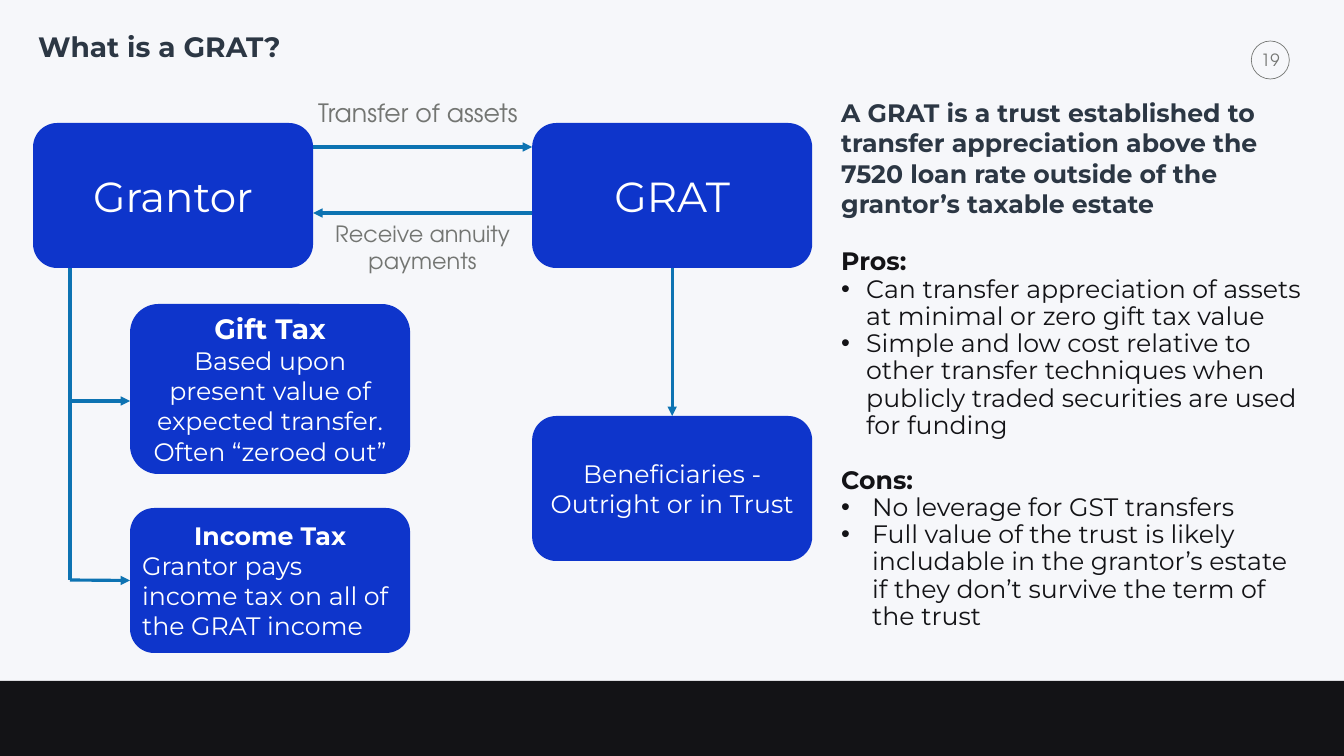
from lxml.etree import SubElement
from pptx import Presentation
from pptx.dml.color import RGBColor
from pptx.enum.shapes import MSO_CONNECTOR, MSO_SHAPE
from pptx.enum.text import MSO_ANCHOR, MSO_AUTO_SIZE, PP_ALIGN
from pptx.oxml.ns import qn
from pptx.util import Inches, Pt

SCALE = Inches(1) / 50.4  # EMU per px
SANS, GEOMETRIC = "Montserrat", "TeX Gyre Adventor"
BLUE, ARROW, WHITE = "0E35CB", "0D73B2", "FFFFFF"
INK, SLATE, GRAY, PALE = "131316", "2C3744", "737572", "F6F7FA"
LEFT, CENTER = PP_ALIGN.LEFT, PP_ALIGN.CENTER

# Content: each paragraph is a dict of text and formatting
TITLE = dict(text="What is a GRAT?", size=40, color=SLATE, bold=True)
PAGE_NUMBER = dict(text="19", size=24, color=GRAY, font=GEOMETRIC, align=CENTER)

# name: (left, top, height, paragraphs)
BOXES = {
    "grantor": (33, 123, 145, [dict(text="Grantor", size=60)]),
    "grat": (532, 123, 145, [dict(text="GRAT", size=60)]),
    "beneficiaries": (532, 416, 145, [
        dict(text="Beneficiaries -"), dict(text="Outright or in Trust")]),
    "gift tax": (130, 304, 170, [
        dict(text="Gift Tax", size=40, bold=True),
        dict(text="Based upon present value of expected transfer. Often “zeroed out”")]),
    "income tax": (130, 508, 145, [
        dict(text="Income Tax", bold=True),
        dict(text="Grantor pays income tax on all of the GRAT income", align=LEFT)]),
}
BOX_WIDTH = 280

# (left, top, width, height, paragraph)
ARROW_LABELS = [
    (313, 95, 219, 36, dict(text="Transfer of assets", color=GRAY, font=GEOMETRIC)),
    (313, 218, 219, 60, dict(text="Receive annuity payments", size=32, color=GRAY,
                             font=GEOMETRIC, align=CENTER)),
]

DEFINITION = ("A GRAT is a trust established to transfer appreciation above the "
              "7520 loan rate outside of the grantor’s taxable estate")
# (heading, gap above in points, bullet indent in px, points)
LISTS = [
    ("Pros:", 44, 25, [
        "Can transfer appreciation of assets at minimal or zero gift tax value",
        "Simple and low cost relative to other transfer techniques when "
        "publicly traded securities are used for funding"]),
    ("Cons:", 39.5, 31, [
        "No leverage for GST transfers",
        "Full value of the trust is likely includable in the grantor’s estate "
        "if they don’t survive the term of the trust"]),
]


def px(*lengths):
    return [round(length * SCALE) for length in lengths]


def rgb(value):
    return RGBColor.from_string(value)


def format_paragraph(paragraph, text, size=36, color=INK, bold=False, font=SANS,
                     align=LEFT, before=0, spacing=1.0, indent=0):
    paragraph.text = text
    paragraph.alignment = align
    paragraph.line_spacing = spacing
    paragraph.space_before = Pt(before)
    if indent:
        properties = paragraph._p.get_or_add_pPr()
        width = px(indent)[0]
        properties.set("marL", str(width))
        properties.set("indent", str(-width))
        SubElement(properties, qn("a:buFont"), typeface="Arial")
        SubElement(properties, qn("a:buChar"), char="•")
    paragraph.font.size = Pt(size)
    paragraph.font.bold = bold
    paragraph.font.name = font
    paragraph.font.color.rgb = rgb(color)


def write(shape, paragraphs, anchor=MSO_ANCHOR.TOP):
    frame = shape.text_frame
    frame.word_wrap = True
    frame.auto_size = MSO_AUTO_SIZE.NONE
    frame.vertical_anchor = anchor
    for index, content in enumerate(paragraphs):
        paragraph = frame.add_paragraph() if index else frame.paragraphs[0]
        format_paragraph(paragraph, **content)


def add_shape(kind, place, fill=None, line=None):
    shape = slide.shapes.add_shape(kind, *px(*place))
    shape.shadow.inherit = False
    if fill:
        shape.fill.solid()
        shape.fill.fore_color.rgb = rgb(fill)
    else:
        shape.fill.background()
    if line:
        shape.line.color.rgb = rgb(line)
        shape.line.width = Pt(1)
    else:
        shape.line.fill.background()
    return shape


def add_text(place, paragraphs):
    write(slide.shapes.add_textbox(*px(*place)), paragraphs)


def add_line(start, end, arrow=True):
    connector = slide.shapes.add_connector(MSO_CONNECTOR.STRAIGHT, *px(*start, *end))
    connector.line.color.rgb = rgb(ARROW)
    connector.line.width = Pt(4.5)
    if arrow:
        SubElement(connector.line._get_or_add_ln(), qn("a:tailEnd"), type="triangle")
    SubElement(connector._element.spPr, qn("a:effectLst"))
    return connector


presentation = Presentation()
presentation.slide_width, presentation.slide_height = Inches(26.66), Inches(15)
slide = presentation.slides.add_slide(presentation.slide_layouts[5])
slide.background.fill.solid()
slide.background.fill.fore_color.rgb = rgb(PALE)

# Title, page number and footer band
title = slide.shapes.title
title.left, title.top, title.width, title.height = px(33, 27, 1207, 39)
write(title, [TITLE])
badge = add_shape(MSO_SHAPE.OVAL, (1251, 41, 38, 38), line=GRAY)
frame = badge.text_frame
frame.margin_left = frame.margin_right = frame.margin_top = frame.margin_bottom = 0
write(badge, [PAGE_NUMBER], MSO_ANCHOR.MIDDLE)
add_shape(MSO_SHAPE.RECTANGLE, (0, 681, 1344, 75), fill=INK)

# Definition with pros and cons
body = [dict(text=DEFINITION, color=SLATE, bold=True)]
for heading, gap, indent, points in LISTS:
    body.append(dict(text=heading, bold=True, before=gap, spacing=0.9))
    body += [dict(text=point, spacing=0.9, indent=indent) for point in points]
add_text((836, 95, 475, 604), body)

# Diagram boxes
boxes = {}
for name, (left, top, height, paragraphs) in BOXES.items():
    boxes[name] = add_shape(MSO_SHAPE.ROUNDED_RECTANGLE,
                            (left, top, BOX_WIDTH, height), fill=BLUE)
    write(boxes[name], [dict(color=WHITE, align=CENTER) | content for content in paragraphs],
          MSO_ANCHOR.MIDDLE)

# Exchange between grantor and trust
add_line((313, 147), (532, 147))
add_line((532, 213), (313, 213))
for *place, label in ARROW_LABELS:
    add_text(place, [label])

# Trust to beneficiaries
payout = add_line((672, 268), (672, 416))
payout.begin_connect(boxes["grat"], 2)
payout.end_connect(boxes["beneficiaries"], 0)

# Grantor to its two taxes
add_line((70, 268), (70, 580), arrow=False)
add_line((70, 401), (130, 401))
add_line((70, 580), (130, 580)).end_connect(boxes["income tax"], 1)

presentation.save("out.pptx")
